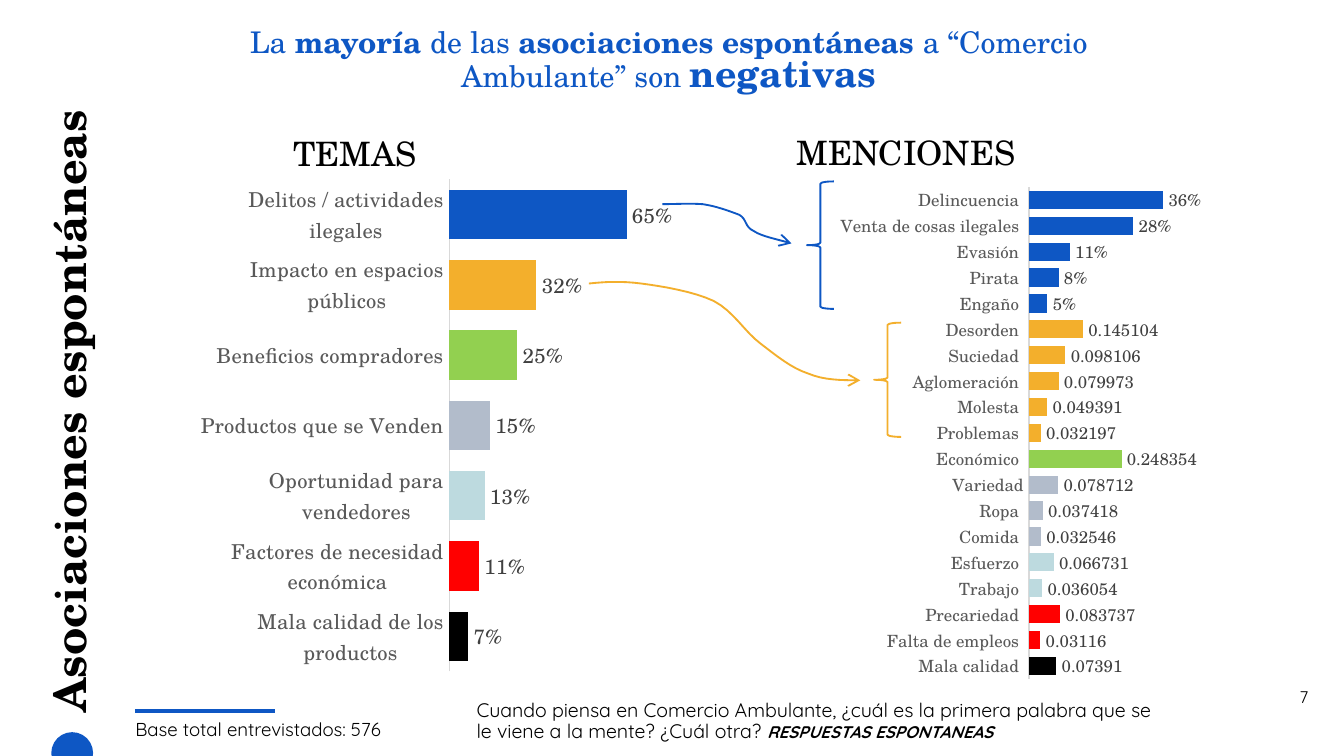
"""Build the slide on spontaneous associations with street vending."""
from lxml import etree
from pptx import Presentation
from pptx.chart.data import CategoryChartData
from pptx.dml.color import RGBColor
from pptx.enum.chart import XL_CHART_TYPE, XL_LABEL_POSITION, XL_TICK_MARK
from pptx.enum.shapes import MSO_CONNECTOR, MSO_SHAPE
from pptx.enum.text import MSO_ANCHOR, MSO_AUTO_SIZE, PP_ALIGN
from pptx.oxml.ns import qn
from pptx.util import Cm, Pt

BAR = XL_CHART_TYPE.BAR_CLUSTERED
OUTSIDE = XL_LABEL_POSITION.OUTSIDE_END
NO_TICK = XL_TICK_MARK.NONE
STRAIGHT = MSO_CONNECTOR.STRAIGHT
OVAL, BRACE = MSO_SHAPE.OVAL, MSO_SHAPE.LEFT_BRACE
TOP, MIDDLE = MSO_ANCHOR.TOP, MSO_ANCHOR.MIDDLE
NO_FIT = MSO_AUTO_SIZE.NONE
LEFT, CENTER, RIGHT = PP_ALIGN.LEFT, PP_ALIGN.CENTER, PP_ALIGN.RIGHT

SERIF, SANS = "TeX Gyre Schola", "Quicksand"
COLORS = {
    "blue": "0E57C4", "amber": "F3AF2C", "green": "92D050", "gray": "B2BCCB",
    "aqua": "BDDADF", "red": "FF0000", "black": "000000",
    "category": "595959", "label": "404040", "axis": "D9D9D9",
}
THEMES = [
    ("Delitos / actividades ilegales", 0.65, "blue"),
    ("Impacto en espacios públicos", 0.32, "amber"),
    ("Beneficios compradores", 0.25, "green"),
    ("Productos que se Venden", 0.15, "gray"),
    ("Oportunidad para vendedores", 0.13, "aqua"),
    ("Factores de necesidad económica", 0.11, "red"),
    ("Mala calidad de los productos", 0.07, "black"),
]
MENTIONS = {
    "blue": {"Delincuencia ": 0.36, "Venta de cosas ilegales ": 0.28,
             "Evasión ": 0.11, "Pirata ": 0.08, "Engaño ": 0.05},
    "amber": {"Desorden ": 0.145104, "Suciedad ": 0.098106,
              "Aglomeración ": 0.079973, "Molesta ": 0.049391,
              "Problemas ": 0.032197},
    "green": {"Económico ": 0.248354},
    "gray": {"Variedad": 0.078712, "Ropa ": 0.037418, "Comida ": 0.032546},
    "aqua": {"Esfuerzo ": 0.066731, "Trabajo ": 0.036054},
    "red": {"Precariedad ": 0.083737, "Falta de empleos ": 0.03116},
    "black": {"Mala calidad ": 0.07391},
}
CRIME_ARROW = [
    (12.52, 3.86), (12.78, 3.86), (13.03, 3.84), (13.28, 3.86), (13.51, 3.89),
    (13.79, 3.99), (13.97, 4.06), (14.12, 4.14), (14.07, 4.29), (14.25, 4.37),
    (14.4, 4.47), (14.68, 4.52), (14.96, 4.6),
]
SPACE_ARROW = [
    (11.13, 5.36), (11.43, 5.33), (11.71, 5.31), (12.12, 5.36), (12.5, 5.41),
    (13.11, 5.51), (13.49, 5.69), (13.87, 5.89), (14.07, 6.27), (14.38, 6.5),
    (14.68, 6.73), (14.96, 6.96), (15.27, 7.06), (15.57, 7.19), (15.93, 7.19),
    (16.26, 7.19),
]


def rgb(name):
    return RGBColor.from_string(COLORS[name])


def set_font(font, size, color, face, bold=None, italic=None):
    font.size, font.name = Pt(size), face
    font.bold, font.italic = bold, italic
    font.color.rgb = rgb(color)


def write(frame, text, size=18, color="black", face=SERIF, bold=None, italic=None,
          align=LEFT, spacing=None, anchor=TOP):
    frame.word_wrap, frame.auto_size = True, NO_FIT
    frame.vertical_anchor = anchor
    paragraph = frame.paragraphs[0]
    paragraph.alignment = align
    paragraph.line_spacing = spacing
    run = paragraph.add_run()
    run.text = text
    set_font(run.font, size, color, face, bold, italic)


def add_text(slide, box, text, **style):
    frame = slide.shapes.add_textbox(*map(Cm, box)).text_frame
    write(frame, text, **style)
    return frame


def add_title(slide, box, text):
    title = slide.shapes.title
    title.left, title.top, title.width, title.height = map(Cm, box)
    title.rotation = 270
    write(title.text_frame, text, size=24, bold=True, spacing=0.9, anchor=MIDDLE)


def add_outline(slide, box, kind, color, filled=False):
    shape = slide.shapes.add_shape(kind, *map(Cm, box))
    shape.shadow.inherit = False
    if filled:
        shape.fill.solid()
        shape.fill.fore_color.rgb = rgb(color)
        shape.line.fill.background()
    else:
        shape.fill.background()
        shape.line.color.rgb = rgb(color)
        shape.line.width = Pt(1)


def add_rule(slide, left, right, top, color):
    rule = slide.shapes.add_connector(STRAIGHT, Cm(left), Cm(top), Cm(right), Cm(top))
    rule.line.color.rgb = rgb(color)
    rule.line.width = Pt(1.75)
    etree.SubElement(rule.element.spPr, qn("a:effectLst"))


def curve_points(knots, steps=8):
    for first in range(0, len(knots) - 1, 3):
        for step in range(1, steps + 1):
            t = step / steps
            weights = ((1 - t) ** 3, 3 * t * (1 - t) ** 2, 3 * t * t * (1 - t), t ** 3)
            yield tuple(
                Cm(sum(w * knot[axis] for w, knot in zip(weights, knots[first:first + 4])))
                for axis in (0, 1))


def add_curved_arrow(slide, knots, color):
    builder = slide.shapes.build_freeform(*map(Cm, knots[0]))
    builder.add_line_segments(curve_points(knots), close=False)
    arrow = builder.convert_to_shape()
    arrow.shadow.inherit = False
    arrow.fill.background()
    arrow.line.color.rgb = rgb(color)
    arrow.line.width = Pt(1)
    etree.SubElement(arrow.line._get_or_add_ln(), qn("a:tailEnd"), type="arrow")


def place_plot(chart):
    area = chart.element.find(".//" + qn("c:plotArea"))
    for old in area.findall(qn("c:layout")):
        area.remove(old)
    layout = etree.Element(qn("c:layout"))
    area.insert(0, layout)
    manual = etree.SubElement(layout, qn("c:manualLayout"))
    settings = {"layoutTarget": "inner", "xMode": "edge", "yMode": "edge",
                "x": 0.5, "y": 0.04, "w": 0.37, "h": 0.92}
    for tag, value in settings.items():
        etree.SubElement(manual, qn(f"c:{tag}"), val=str(value))


def add_bars(slide, box, categories, series, size, maximum, overlap=0):
    data = CategoryChartData()
    data.categories = categories
    for number, (values, _, number_format) in enumerate(series, 1):
        data.add_series(f"Series {number}", values, number_format)
    chart = slide.shapes.add_chart(BAR, *map(Cm, box), data).chart
    chart.has_legend = chart.has_title = False
    set_font(chart.font, size, "black", SERIF)
    place_plot(chart)
    category_axis, value_axis = chart.category_axis, chart.value_axis
    category_axis.reverse_order = True
    category_axis.major_tick_mark = category_axis.minor_tick_mark = NO_TICK
    category_axis.format.line.color.rgb = rgb("axis")
    category_axis.format.line.width = Pt(0.75)
    set_font(category_axis.tick_labels.font, size, "category", SERIF)
    value_axis.minimum_scale, value_axis.maximum_scale = 0, maximum
    value_axis.has_major_gridlines = value_axis.visible = False
    plot = chart.plots[0]
    plot.gap_width, plot.overlap, plot.vary_by_categories = 42, overlap, False
    for bars, (_, colors, number_format) in zip(plot.series, series):
        bars.format.fill.solid()
        bars.format.fill.fore_color.rgb = rgb(colors[0])
        for index, color in enumerate(colors[1:], 1):
            fill = bars.points[index].format.fill
            fill.solid()
            fill.fore_color.rgb = rgb(color)
        labels = bars.data_labels
        labels.show_value, labels.position = True, OUTSIDE
        labels.number_format, labels.number_format_is_linked = number_format, False
        set_font(labels.font, size, "label", SERIF)


def main():
    deck = Presentation()
    deck.slide_width, deck.slide_height = Cm(25.4), Cm(14.29)
    slide = deck.slides.add_slide(deck.slide_layouts[5])
    add_outline(slide, (0.97, 13.84, 0.79, 0.79), OVAL, "blue", filled=True)
    add_rule(slide, 2.55, 5.2, 13.44, "blue")
    add_title(slide, (-5.44, 6.48, 13.61, 0.86), "Asociaciones espontáneas")
    add_text(slide, (2.31, 13.5, 12.8, 0.69), "Base total entrevistados: 576",
             size=10, face=SANS, spacing=0.9)
    headline = {"size": 16, "color": "blue", "align": CENTER, "spacing": 0.8,
                "anchor": MIDDLE}
    frame = add_text(slide, (4.04, 0.39, 17.2, 1.6), "La", **headline)
    for text, bold in ((" mayoría ", True), ("de las ", False),
                       ("asociaciones espontáneas ", True),
                       ("a “Comercio Ambulante” son ", False)):
        write(frame, text, bold=bold, **headline)
    write(frame, "negativas", bold=True, **{**headline, "size": 20})
    add_text(slide, (24.31, 12.85, 0.91, 0.89), "7", size=9, face=SANS)

    themes, shares, colors = zip(*THEMES)
    add_bars(slide, (3.61, 2.99, 9.76, 10.11), themes, [(shares, colors, "0%")], 11, 0.7)
    words = [word for group in MENTIONS.values() for word in group]
    groups = [([group.get(word) for word in words], [color],
               "0%" if color == "blue" else "General")
              for color, group in MENTIONS.items()]
    add_bars(slide, (15.63, 3.13, 7.63, 10.11), words, groups, 9, 0.4, overlap=100)

    add_text(slide, (4.52, 2.39, 3.61, 1.02), "TEMAS", align=RIGHT)
    add_text(slide, (14.32, 2.36, 5.13, 1.02), "MENCIONES", align=RIGHT)
    question = add_text(
        slide, (8.76, 13.11, 13.49, 1.19),
        "Cuando piensa en Comercio Ambulante, ¿cuál es la primera palabra que se "
        "le viene a la mente? ¿Cuál otra? ", size=10.5, face=SANS, spacing=0.9)
    write(question, "RESPUESTAS ESPONTANEAS", size=9, face=SANS, bold=True,
          italic=True, spacing=0.9)
    add_outline(slide, (15.25, 3.43, 0.51, 2.41), BRACE, "blue")
    add_curved_arrow(slide, CRIME_ARROW, "blue")
    add_outline(slide, (16.52, 6.1, 0.51, 2.16), BRACE, "amber")
    add_curved_arrow(slide, SPACE_ARROW, "amber")
    deck.save("out.pptx")


if __name__ == "__main__":
    main()
